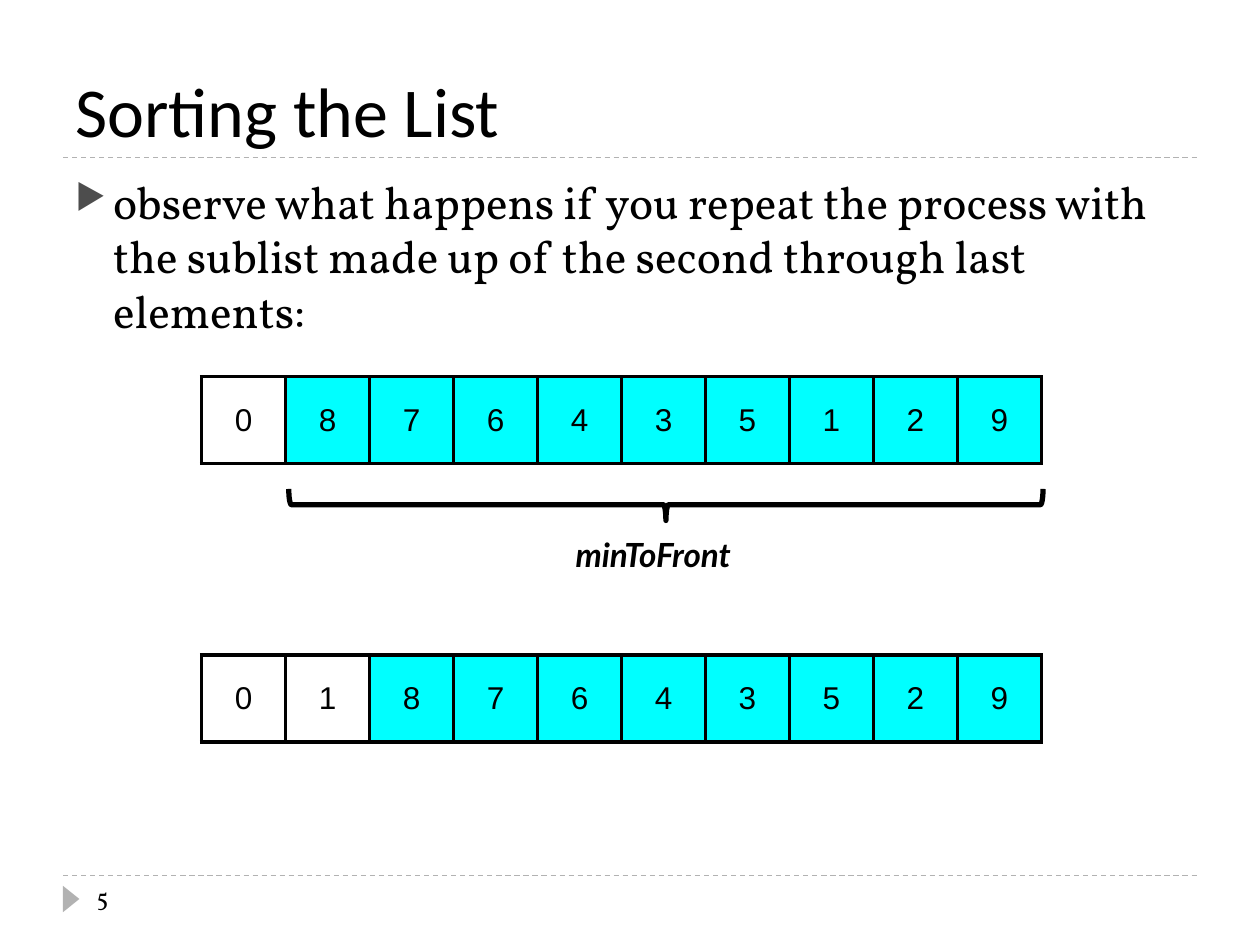
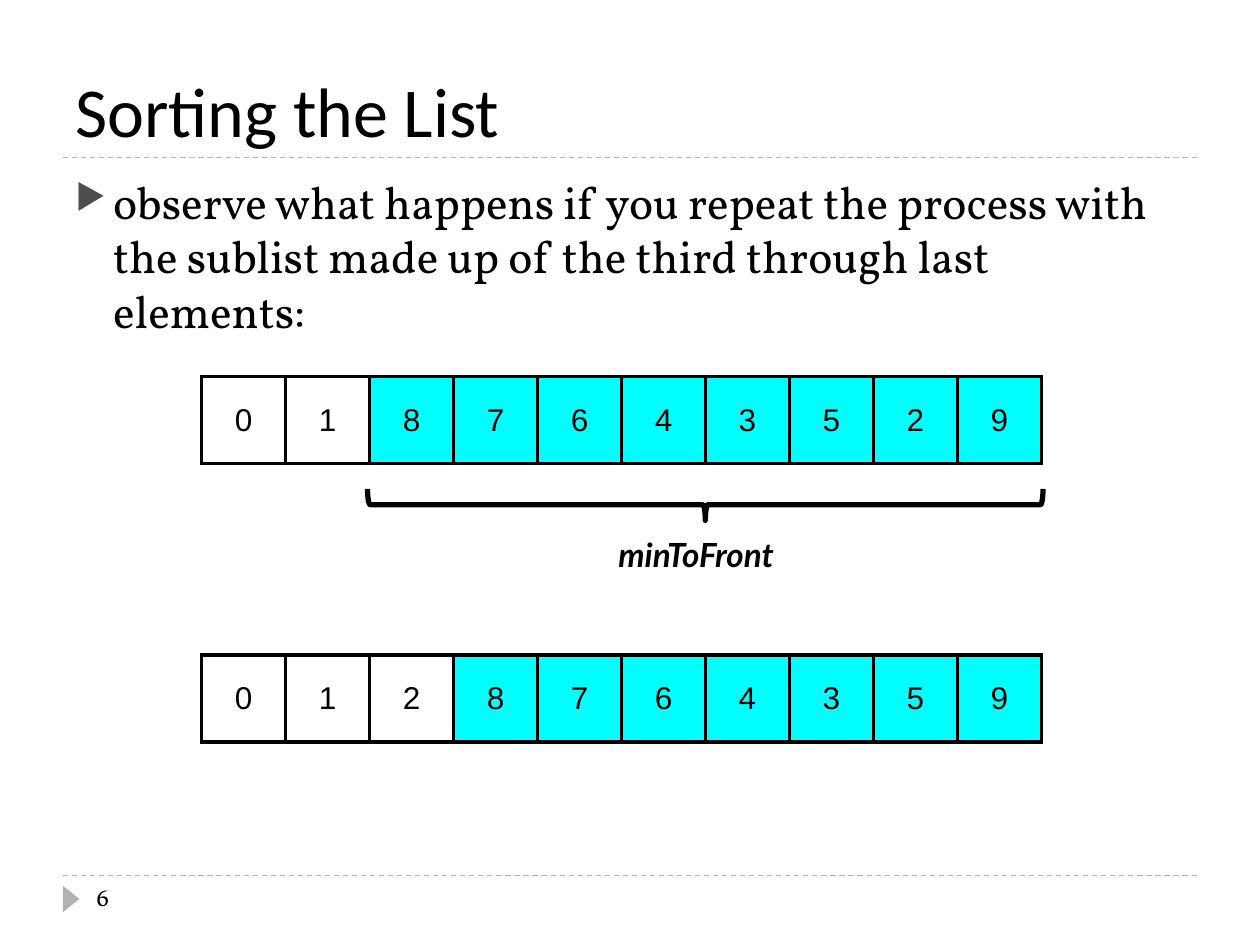
from dataclasses import dataclass

from lxml.etree import SubElement
from pptx import Presentation
from pptx.dml.color import RGBColor
from pptx.enum.dml import MSO_LINE
from pptx.enum.shapes import MSO_CONNECTOR, MSO_SHAPE
from pptx.enum.text import MSO_ANCHOR, MSO_AUTO_SIZE, PP_ALIGN
from pptx.oxml import parse_xml
from pptx.oxml.ns import nsdecls, qn
from pptx.shapes.autoshape import Shape
from pptx.slide import Slide
from pptx.table import _Cell
from pptx.text.text import _Paragraph
from pptx.util import Pt


@dataclass(frozen=True)
class TextStyle:
    font: str
    size: float
    bold: bool = False
    italic: bool = False


@dataclass(frozen=True)
class Theme:
    ink: str = "000000"
    rule: str = "B2B2B2"
    bullet: str = "4D4D4D"
    sorted_cell: str = "FFFFFF"
    unsorted_cell: str = "00FFFF"
    title: TextStyle = TextStyle("Calibri", 40)
    body: TextStyle = TextStyle("Vollkorn", 26)
    page_number: TextStyle = TextStyle("Vollkorn", 14)
    cell: TextStyle = TextStyle("Arial", 18)
    label: TextStyle = TextStyle("Lato", 19, bold=True, italic=True)


@dataclass(frozen=True)
class SortStep:
    page_number: int
    sublist_start: str
    before: str
    after: str
    sorted_count: int
    brace_left: float
    label_left: float


THEME = Theme()
STEPS = (
    SortStep(5, "second", "0876435129", "0187643529", 1, 165, 321.8),
    SortStep(6, "third", "0187643529", "0128764359", 2, 210, 346.3),
)

MARGIN = 36
CONTENT_WIDTH = 648
TITLE_RULE_TOP = 90
FOOTER_TOP = 500.4
LIST_LEFT = 115.2
CELL_WIDTH = 48
CELL_HEIGHT = 49.7
BEFORE_TOP = 215.3
AFTER_TOP = 374.4
BRACE_RIGHT = 596
BRACE_TOP = 279.4
BRACE_HEIGHT = 18
BORDER_WIDTH = 2.25


def color(value: str) -> RGBColor:
    return RGBColor.from_string(value)


def write(paragraph: _Paragraph, text: str, style: TextStyle) -> None:
    paragraph.text = text
    font = paragraph.font
    font.name, font.size = style.font, Pt(style.size)
    font.bold, font.italic = style.bold, style.italic
    font.color.rgb = color(THEME.ink)


def add_text(slide: Slide, left: float, top: float, width: float, height: float,
             text: str, style: TextStyle, wrap: bool = True) -> Shape:
    box = slide.shapes.add_textbox(Pt(left), Pt(top), Pt(width), Pt(height))
    box.text_frame.word_wrap = wrap
    write(box.text_frame.paragraphs[0], text, style)
    return box


def add_title(slide: Slide, text: str) -> None:
    title = slide.shapes.title
    title.left, title.top = Pt(MARGIN), Pt(12.2)
    title.width, title.height = Pt(CONTENT_WIDTH), Pt(TITLE_RULE_TOP - 12.2)
    frame = title.text_frame
    frame.vertical_anchor = MSO_ANCHOR.BOTTOM
    frame.auto_size = MSO_AUTO_SIZE.NONE
    paragraph = frame.paragraphs[0]
    paragraph.alignment = PP_ALIGN.LEFT
    write(paragraph, text, THEME.title)


def add_dashed_rule(slide: Slide, top: float) -> None:
    rule = slide.shapes.add_connector(
        MSO_CONNECTOR.STRAIGHT, Pt(MARGIN), Pt(top), Pt(MARGIN + CONTENT_WIDTH), Pt(top))
    rule.line.color.rgb = color(THEME.rule)
    rule.line.width = Pt(0.75)
    rule.line.dash_style = MSO_LINE.DASH
    SubElement(rule._element.spPr, qn("a:effectLst"))


def add_frame(slide: Slide, page_number: int) -> None:
    """Draw the rules, footer marker and page number that every slide has."""
    for top in (FOOTER_TOP, TITLE_RULE_TOP):
        add_dashed_rule(slide, top)
    marker = slide.shapes.add_shape(
        MSO_SHAPE.ISOSCELES_TRIANGLE, Pt(33.1), Pt(509), Pt(15.1), Pt(9.4))
    marker.rotation = 90
    marker.shadow.inherit = False
    marker.fill.solid()
    marker.fill.fore_color.rgb = color(THEME.rule)
    marker.line.fill.background()
    add_text(slide, 48.2, FOOTER_TOP, 156, 28.8, str(page_number), THEME.page_number)


def add_bullet_text(slide: Slide, text: str) -> None:
    box = add_text(slide, MARGIN, 95.8, CONTENT_WIDTH, 388.8, text, THEME.body)
    paragraph = box.text_frame.paragraphs[0]
    paragraph.space_before = Pt(6)
    properties = paragraph._p.get_or_add_pPr()
    properties.set("marL", str(Pt(21.6)))
    properties.set("indent", str(-Pt(21.6)))
    bullet_color = SubElement(properties, qn("a:buClr"))
    SubElement(bullet_color, qn("a:srgbClr"), val=THEME.bullet)
    SubElement(properties, qn("a:buSzPct"), val="76000")
    SubElement(properties, qn("a:buChar"), char="▶")


def set_borders(cell: _Cell) -> None:
    properties = cell._tc.get_or_add_tcPr()
    for position, side in enumerate(("lnL", "lnR", "lnT", "lnB")):
        properties.insert(position, parse_xml(
            f'<a:{side} {nsdecls("a")} w="{Pt(BORDER_WIDTH)}"><a:solidFill>'
            f'<a:srgbClr val="{THEME.ink}"/></a:solidFill></a:{side}>'))


def add_number_list(slide: Slide, top: float, digits: str, sorted_count: int) -> None:
    """Draw one row of cells, with the unsorted sublist highlighted."""
    table = slide.shapes.add_table(
        1, len(digits), Pt(LIST_LEFT), Pt(top),
        Pt(CELL_WIDTH * len(digits)), Pt(CELL_HEIGHT)).table
    table.first_row = table.horz_banding = False
    for index, digit in enumerate(digits):
        cell = table.cell(0, index)
        cell.vertical_anchor = MSO_ANCHOR.MIDDLE
        cell.fill.solid()
        cell.fill.fore_color.rgb = color(
            THEME.sorted_cell if index < sorted_count else THEME.unsorted_cell)
        set_borders(cell)
        paragraph = cell.text_frame.paragraphs[0]
        paragraph.alignment = PP_ALIGN.CENTER
        write(paragraph, digit, THEME.cell)


def add_sublist_brace(slide: Slide, left: float) -> None:
    """Draw a right brace turned a quarter so that it points down."""
    length = BRACE_RIGHT - left
    center_x = left + length / 2
    center_y = BRACE_TOP + BRACE_HEIGHT / 2
    brace = slide.shapes.add_shape(
        MSO_SHAPE.RIGHT_BRACE, Pt(center_x - BRACE_HEIGHT / 2),
        Pt(center_y - length / 2), Pt(BRACE_HEIGHT), Pt(length))
    brace.rotation = 90
    brace.shadow.inherit = False
    brace.fill.background()
    brace.line.color.rgb = color(THEME.ink)
    brace.line.width = Pt(3)


def add_step_slide(presentation: Presentation, step: SortStep) -> None:
    slide = presentation.slides.add_slide(presentation.slide_layouts.get_by_name("Title Only"))
    add_frame(slide, step.page_number)
    add_title(slide, "Sorting the List")
    add_bullet_text(slide, "observe what happens if you repeat the process with the sublist "
                           f"made up of the {step.sublist_start} through last elements:")
    add_number_list(slide, BEFORE_TOP, step.before, step.sorted_count)
    add_sublist_brace(slide, step.brace_left)
    label = add_text(slide, step.label_left, 301.7, 116.6, 30.2,
                     "minToFront", THEME.label, wrap=False)
    label.text_frame.auto_size = MSO_AUTO_SIZE.SHAPE_TO_FIT_TEXT
    add_number_list(slide, AFTER_TOP, step.after, step.sorted_count + 1)


def main() -> None:
    presentation = Presentation()
    presentation.slide_width, presentation.slide_height = Pt(720), Pt(540)
    for step in STEPS:
        add_step_slide(presentation, step)
    presentation.save("out.pptx")


if __name__ == "__main__":
    main()
